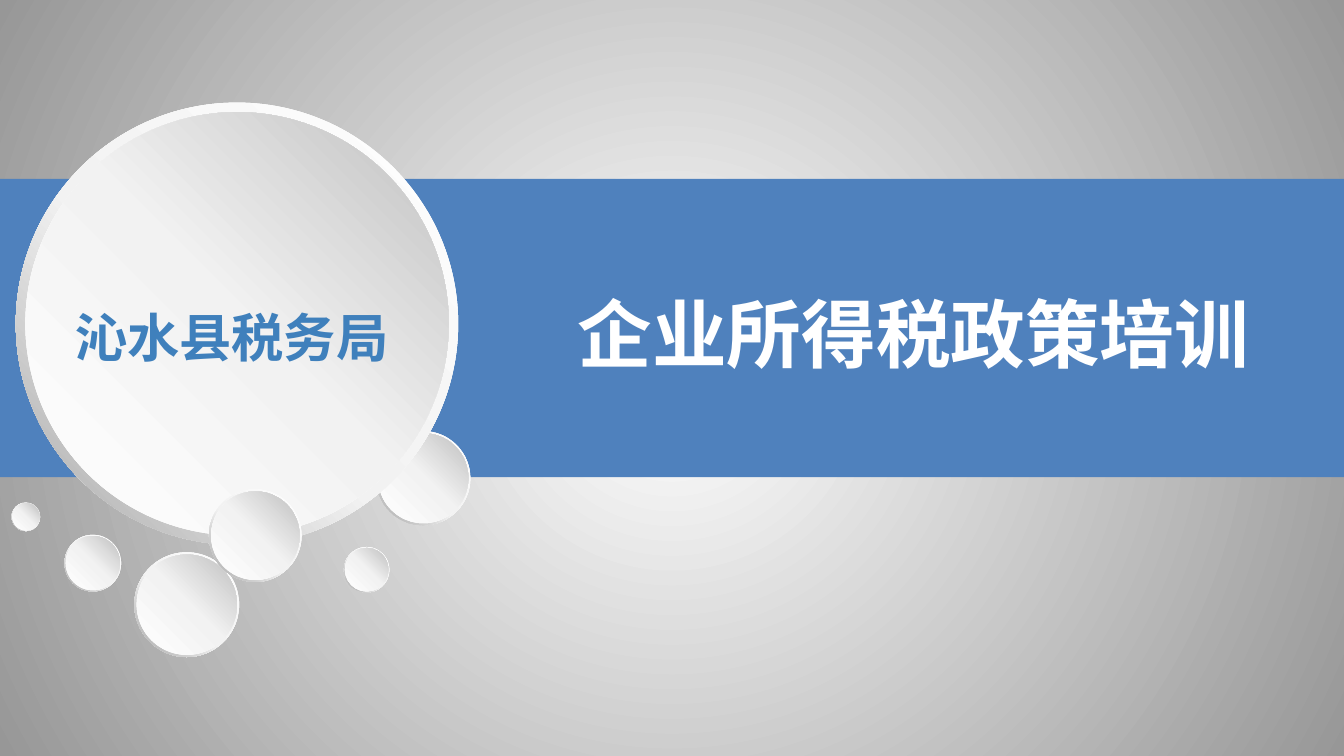
from lxml.etree import SubElement
from pptx import Presentation
from pptx.dml.color import RGBColor
from pptx.enum.shapes import MSO_SHAPE
from pptx.enum.text import MSO_AUTO_SIZE, PP_ALIGN
from pptx.oxml.ns import qn
from pptx.util import Cm, Pt

# Content: lengths in cm, gradient stops as (percent, colour)
FONT = "Noto Sans CJK SC"
TITLE = "企业所得税政策培训"
OFFICE = "沁水县税务局"
BACKDROP = [(0, "FFFFFF"), (100, "979797")]
RIM = [(0, "FFFFFF"), (55, "F2F2F2"), (100, "A6A6A6")]
DISC = [(0, "FFFFFF"), (51, "F2F2F2"), (100, "BFBFBF")]
RIM_WIDTH = 0.049
DISC_RATIO = 0.957
BUBBLES = [  # left, top, diameter, from back to front
    (6.5, 10.34, 0.86),
    (7.11, 8.15, 1.78),
    (1.22, 10.11, 1.07),
    (0.22, 9.5, 0.54),
    (0.3, 1.94, 8.36),
    (2.54, 10.44, 1.98),
    (3.95, 9.25, 1.75),
]


def color(value):
    return RGBColor.from_string(value)


def set_gradient(fill, element, stops, angle=None):
    """Linear gradient at a clockwise angle, or circular from the centre."""
    fill.gradient()
    gradient = element.find(".//" + qn("a:gradFill"))
    for child in list(gradient):
        gradient.remove(child)
    stop_list = SubElement(gradient, qn("a:gsLst"))
    for percent, value in stops:
        stop = SubElement(stop_list, qn("a:gs"), pos=str(percent * 1000))
        SubElement(stop, qn("a:srgbClr"), val=value)
    if angle is None:
        circle = SubElement(gradient, qn("a:path"), path="circle")
        SubElement(circle, qn("a:fillToRect"),
                   l="50000", t="50000", r="50000", b="50000")
    else:
        SubElement(gradient, qn("a:lin"), ang=str(angle * 60000), scaled="0")


def add_plain(shapes, kind, left, top, width, height):
    shape = shapes.add_shape(kind, Cm(left), Cm(top), Cm(width), Cm(height))
    shape.shadow.inherit = False
    shape.line.fill.background()
    return shape


def add_bubble(page, left, top, size):
    group = page.shapes.add_group_shape()
    rim = add_plain(group.shapes, MSO_SHAPE.DONUT, left, top, size, size)
    rim.adjustments[0] = RIM_WIDTH
    set_gradient(rim.fill, rim.element, RIM, 135)
    inner = size * DISC_RATIO
    inset = (size - inner) / 2
    disc = add_plain(group.shapes, MSO_SHAPE.OVAL,
                     left + inset, top + inset, inner, inner)
    set_gradient(disc.fill, disc.element, DISC, 315)


def add_text(page, text, left, top, width, height, *, size, ink,
             align=PP_ALIGN.LEFT):
    box = page.shapes.add_textbox(Cm(left), Cm(top), Cm(width), Cm(height))
    frame = box.text_frame
    frame.word_wrap = True
    frame.auto_size = MSO_AUTO_SIZE.SHAPE_TO_FIT_TEXT
    para = frame.paragraphs[0]
    para.alignment = align
    span = para.add_run()
    span.text = text
    span.font.size = Pt(size)
    span.font.bold = True
    span.font.name = FONT
    span.font.color.rgb = color(ink)
    properties = span.font._element
    SubElement(properties, qn("a:ea"), typeface=FONT)


def main():
    deck = Presentation()
    deck.slide_width, deck.slide_height = Cm(25.4), Cm(14.29)
    page = deck.slides.add_slide(deck.slide_layouts[6])
    set_gradient(page.background.fill, page.element, BACKDROP)

    # Blue band across the page
    band = add_plain(page.shapes, MSO_SHAPE.RECTANGLE, 0, 3.38, 25.4, 5.64)
    band.fill.solid()
    band.fill.fore_color.rgb = color("4F81BD")

    # Bubbles
    for bubble in BUBBLES:
        add_bubble(page, *bubble)

    # Title and office name
    add_text(page, TITLE, 10.67, 5.31, 14.3, 1.96, size=40, ink="FFFFFF")
    add_text(page, OFFICE, 0.76, 5.64, 7.24, 1.45, size=28, ink="3F80BC",
             align=PP_ALIGN.CENTER)

    deck.save("out.pptx")


if __name__ == "__main__":
    main()
